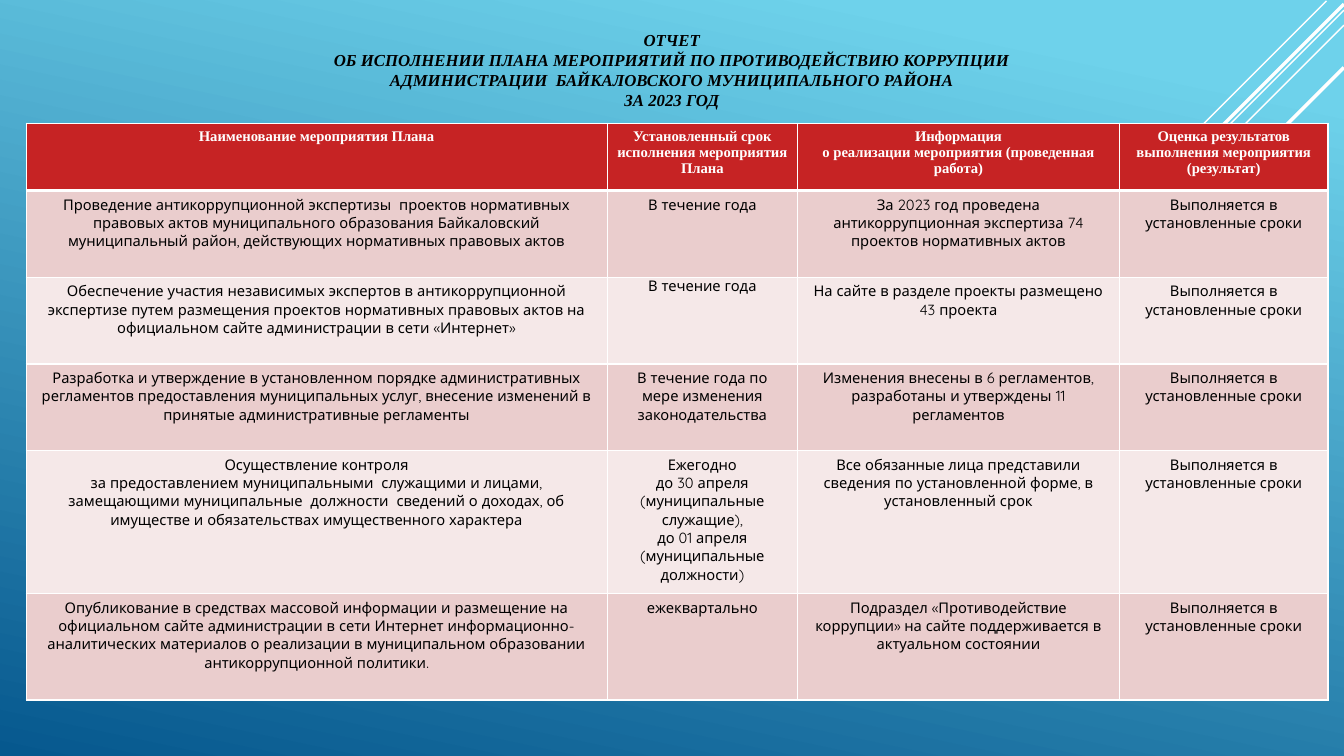
"""Build the slide reporting on the 2023 anti-corruption action plan."""
from dataclasses import dataclass

from lxml import etree
from pptx import Presentation
from pptx.dml.color import RGBColor
from pptx.enum import shapes, text
from pptx.oxml.ns import qn
from pptx.util import Pt

HEADING = (
    "ОТЧЕТ\vОБ ИСПОЛНЕНИИ ПЛАНА МЕРОПРИЯТИЙ ПО ПРОТИВОДЕЙСТВИЮ КОРРУПЦИИ\v"
    "АДМИНИСТРАЦИИ  БАЙКАЛОВСКОГО МУНИЦИПАЛЬНОГО РАЙОНА\vЗА 2023 ГОД"
)
COLUMNS = [
    ("Наименование мероприятия Плана", 415),
    ("Установленный срок исполнения мероприятия Плана", 136),
    ("Информация\vо реализации мероприятия (проведенная работа)", 230),
    ("Оценка результатов выполнения мероприятия (результат)", 149),
]
RESULT = "Выполняется в установленные сроки"
MEASURES = [
    ("Проведение антикоррупционной экспертизы  проектов нормативных правовых актов "
     "муниципального образования Байкаловский муниципальный район, действующих "
     "нормативных правовых актов",
     "В течение года",
     "За 2023 год проведена антикоррупционная экспертиза 74 проектов нормативных актов"),
    ("Обеспечение участия независимых экспертов в антикоррупционной экспертизе путем "
     "размещения проектов нормативных правовых актов на официальном сайте "
     "администрации в сети «Интернет»",
     "В течение года",
     "На сайте в разделе проекты размещено 43 проекта"),
    ("Разработка и утверждение в установленном порядке административных регламентов "
     "предоставления муниципальных услуг, внесение изменений в принятые "
     "административные регламенты",
     "В течение года по мере изменения законодательства",
     "Изменения внесены в 6 регламентов, разработаны и утверждены 11 регламентов"),
    ("Осуществление контроля\n"
     "за предоставлением муниципальными  служащими и лицами, замещающими "
     "муниципальные  должности  сведений о доходах, об имуществе и обязательствах "
     "имущественного характера",
     "Ежегодно\nдо 30 апреля (муниципальные служащие),\nдо 01 апреля\n"
     "(муниципальные должности)",
     "Все обязанные лица представили сведения по установленной форме, "
     "в установленный срок"),
    ("Опубликование в средствах массовой информации и размещение на официальном сайте "
     "администрации в сети Интернет информационно-аналитических материалов о реализации "
     "в муниципальном образовании антикоррупционной политики.",
     "ежеквартально",
     "Подраздел «Противодействие коррупции» на сайте поддерживается в актуальном "
     "состоянии"),
]
ROW_HEIGHTS = [48, 62, 62, 62, 102, 76]
TABLE_LEFT, TABLE_TOP = 18.7, 88
RAYS = [  # start x, start y, horizontal run to the lower left, width
    (947.5, 0.7, 300, 1),
    (960, 7.2, 479, 1),
    (960, 18, 390, 1),
    (960, 2.9, 382, 2.5),
    (960, 48.2, 342, 2.5),
]


@dataclass(frozen=True)
class Theme:
    """Colours, fonts and type sizes."""
    sky: str = "6ED2EB"
    deep: str = "06588E"
    white: str = "FFFFFF"
    black: str = "000000"
    header: str = "C62324"
    bands: tuple = ("EACDCD", "F5E8E8")
    serif: str = "Times New Roman"
    sans: str = "Quicksand"
    heading_size: float = 12
    table_size: float = 10.5


THEME = Theme()


def rgb(value):
    """Turn a hex string into a colour."""
    return RGBColor.from_string(value)


def style(frame, face, size, color, bold, italic=False):
    """Centre and format every paragraph of a text frame."""
    for paragraph in frame.paragraphs:
        paragraph.alignment = text.PP_ALIGN.CENTER
        font = paragraph.font
        font.name, font.size, font.bold, font.italic = face, Pt(size), bold, italic
        font.color.rgb = rgb(color)


def add_borders(cell, top, bottom):
    """Draw white rules on the four sides of a cell."""
    properties = cell._tc.get_or_add_tcPr()
    sides = [("a:lnL", 1), ("a:lnR", 1), ("a:lnT", top), ("a:lnB", bottom)]
    for place, (side, width) in enumerate(sides):
        rule = etree.Element(qn(side), w=str(Pt(width)))
        fill = etree.SubElement(rule, qn("a:solidFill"))
        etree.SubElement(fill, qn("a:srgbClr"), val=THEME.white)
        properties.insert(place, rule)


def paint_background(slide):
    """Fill the slide with the blue gradient."""
    fill = slide.background.fill
    fill.gradient()
    fill.gradient_angle = 258
    stops = [(0.1, THEME.sky), (1, THEME.deep)]
    for stop, (position, color) in zip(fill.gradient_stops, stops):
        stop.position = position
        stop.color.rgb = rgb(color)


def add_rays(slide):
    """Draw the diagonal white lines at the upper right."""
    for x, y, run, width in RAYS:
        ray = slide.shapes.add_connector(
            shapes.MSO_CONNECTOR.STRAIGHT, Pt(x), Pt(y), Pt(x - run), Pt(y + run))
        ray.line.color.rgb = rgb(THEME.white)
        ray.line.width = Pt(width)
        etree.SubElement(ray._element.spPr, qn("a:effectLst"))


def add_heading(slide):
    """Place and format the title."""
    heading = slide.shapes.title
    heading.left, heading.top, heading.width, heading.height = (
        Pt(value) for value in (211.7, 9.4, 536.4, 72.7))
    frame = heading.text_frame
    frame.text = HEADING
    frame.word_wrap = True
    frame.auto_size = text.MSO_AUTO_SIZE.NONE
    frame.vertical_anchor = text.MSO_ANCHOR.BOTTOM
    style(frame, THEME.serif, THEME.heading_size, THEME.black, True, True)


def add_report(slide):
    """Build the table of measures."""
    names, widths = zip(*COLUMNS)
    rows = [names] + [(*measure, RESULT) for measure in MEASURES]
    report = slide.shapes.add_table(
        len(rows), len(names), Pt(TABLE_LEFT), Pt(TABLE_TOP),
        Pt(sum(widths)), Pt(sum(ROW_HEIGHTS))).table
    for column, width in zip(report.columns, widths):
        column.width = Pt(width)
    for r, (row, height) in enumerate(zip(rows, ROW_HEIGHTS)):
        report.rows[r].height = Pt(height)
        is_header = r == 0
        band = THEME.header if is_header else THEME.bands[(r - 1) % 2]
        face = THEME.serif if is_header else THEME.sans
        ink = THEME.white if is_header else THEME.black
        for c, words in enumerate(row):
            cell = report.cell(r, c)
            cell.text = words
            cell.fill.solid()
            cell.fill.fore_color.rgb = rgb(band)
            style(cell.text_frame, face, THEME.table_size, ink, is_header)
            add_borders(cell, 3 if r == 1 else 1, 3 if is_header else 1)
    expert_term = report.cell(2, 1)
    expert_term.margin_left = expert_term.margin_right = Pt(5)
    expert_term.margin_top = expert_term.margin_bottom = Pt(0)


def main():
    """Assemble and save the slide."""
    deck = Presentation()
    deck.slide_width, deck.slide_height = Pt(960), Pt(540)
    slide = deck.slides.add_slide(deck.slide_layouts[5])
    paint_background(slide)
    add_rays(slide)
    add_heading(slide)
    add_report(slide)
    deck.save("out.pptx")


if __name__ == "__main__":
    main()
